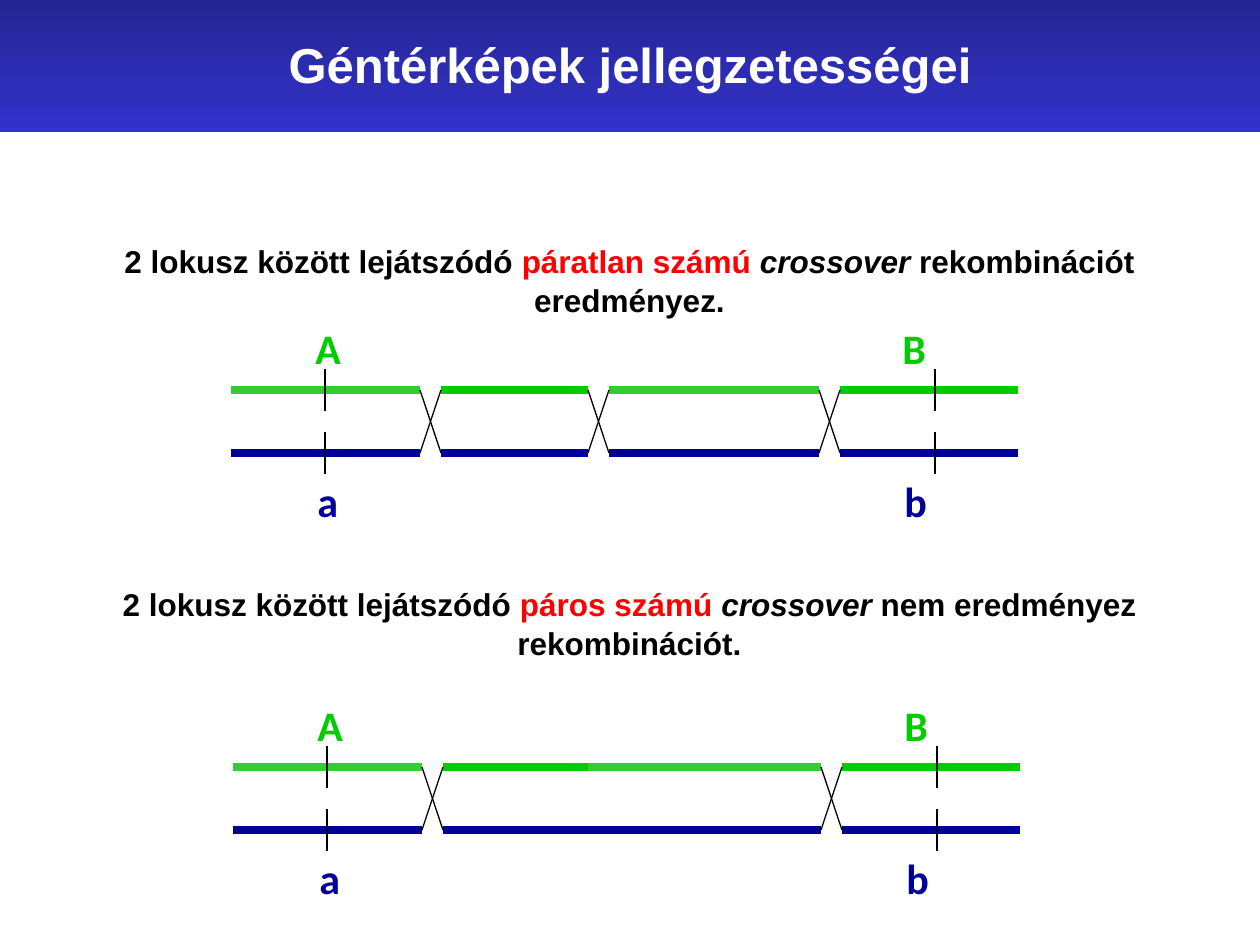
from lxml import etree
from pptx import Presentation
from pptx.dml.color import RGBColor
from pptx.enum.shapes import MSO_CONNECTOR, MSO_SHAPE
from pptx.enum.text import MSO_ANCHOR, PP_ALIGN
from pptx.oxml.ns import qn
from pptx.util import Pt

LINE = MSO_CONNECTOR.STRAIGHT
RECT = MSO_SHAPE.RECTANGLE
CENTER = PP_ALIGN.CENTER
MIDDLE = MSO_ANCHOR.MIDDLE

BLACK = RGBColor(0x00, 0x00, 0x00)
WHITE = RGBColor(0xFF, 0xFF, 0xFF)
RED = RGBColor(0xFF, 0x00, 0x00)
GREEN = RGBColor(0x00, 0xCC, 0x00)
LIGHT_GREEN = RGBColor(0x33, 0xCC, 0x33)
NAVY = RGBColor(0x00, 0x00, 0x99)
BANNER_BLUE = RGBColor(0x33, 0x33, 0xCC)

STATEMENTS = [
    ("páratlan számú ", " rekombinációt eredményez."),
    ("páros számú ", " nem eredményez rekombinációt."),
]


def px(n):
    return round(n * 914400 / 126)


def style(r, font, size, color):
    r.font.name = font
    r.font.size = Pt(size)
    r.font.bold = True
    r.font.color.rgb = color


def add_line(slide, x1, y1, x2, y2, color, width):
    line = slide.shapes.add_connector(LINE, px(x1), px(y1), px(x2), px(y2))
    line.line.color.rgb = color
    line.line.width = Pt(width)
    etree.SubElement(line._element.spPr, qn("a:effectLst"))


def add_label(slide, x, y, text, color):
    sp = slide.shapes.add_textbox(px(x), px(y), px(56), px(63))
    tf = sp.text_frame
    tf.word_wrap = True
    tf.text = text
    style(tf.paragraphs[0].runs[0], "Calibri", 24, color)


def add_banner(slide, x, y, w, h, title):
    sp = slide.shapes.add_shape(RECT, px(x), px(y), px(w), px(h))
    sp.shadow.inherit = False
    sp.line.fill.background()
    sp.fill.gradient()
    sp.fill.gradient_angle = 270
    for stop in sp.fill.gradient_stops:
        stop.color.rgb = BANNER_BLUE
    top_color = next(sp._element.spPr.iter(qn("a:srgbClr")))
    etree.SubElement(top_color, qn("a:shade")).set("val", "46275")
    tf = sp.text_frame
    tf.vertical_anchor = MIDDLE
    tf.text = title
    p = tf.paragraphs[0]
    p.alignment = CENTER
    style(p.runs[0], "Arial", 28, WHITE)


def add_statements(slide, x, y, w, h):
    sp = slide.shapes.add_textbox(px(x), px(y), px(w), px(h))
    tf = sp.text_frame
    tf.word_wrap = True
    for i, (count, result) in enumerate(STATEMENTS):
        p = tf.add_paragraph() if i else tf.paragraphs[0]
        p.alignment = CENTER
        p.line_spacing = 1.04
        p.space_before = Pt(151 * i)
        parts = [("2 lokusz között lejátszódó ", BLACK), (count, RED),
                 ("crossover", BLACK), (result, BLACK)]
        for text, color in parts:
            r = p.add_run()
            r.text = text
            style(r, "Arial", 18, color)
            r.font.italic = text == "crossover"


def add_chromatids(slide, x, y, third_start):
    """Two strands with loci A/a and B/b, crossing at every gap between segments."""
    upper, lower = y + 74, y + 137
    segments = [(0, 189), (210, 357), (third_start, 588), (609, 787)]
    greens = [LIGHT_GREEN, GREEN] * 2
    for strand_y, colors in ((upper, greens), (lower, [NAVY] * 4)):
        for (start, end), color in zip(segments, colors):
            add_line(slide, x + start, strand_y, x + end, strand_y, color, 4.5)

    for (_, end), (start, _) in zip(segments, segments[1:]):
        if start > end:
            add_line(slide, x + start, upper, x + end, lower, BLACK, 0.75)
            add_line(slide, x + end, upper, x + start, lower, BLACK, 0.75)

    for locus, label_x, top, bottom in ((94, 72, "A", "a"), (704, 659, "B", "b")):
        for strand_y in (upper, lower):
            add_line(slide, x + locus, strand_y - 21, x + locus, strand_y + 21,
                     BLACK, 1.5)
        add_label(slide, x + label_x, y, top, GREEN)
        add_label(slide, x + label_x + 2, y + 153, bottom, NAVY)


def main():
    prs = Presentation()
    prs.slide_width = px(1260)
    prs.slide_height = px(945)
    slide = prs.slides.add_slide(prs.slide_layouts[6])
    add_statements(slide, 31, 234, 1197, 432)
    add_chromatids(slide, 231, 316, third_start=378)
    add_chromatids(slide, 233, 693, third_start=355)
    add_banner(slide, 0, -4, 1260, 136, "Géntérképek jellegzetességei")
    prs.save("out.pptx")


if __name__ == "__main__":
    main()
